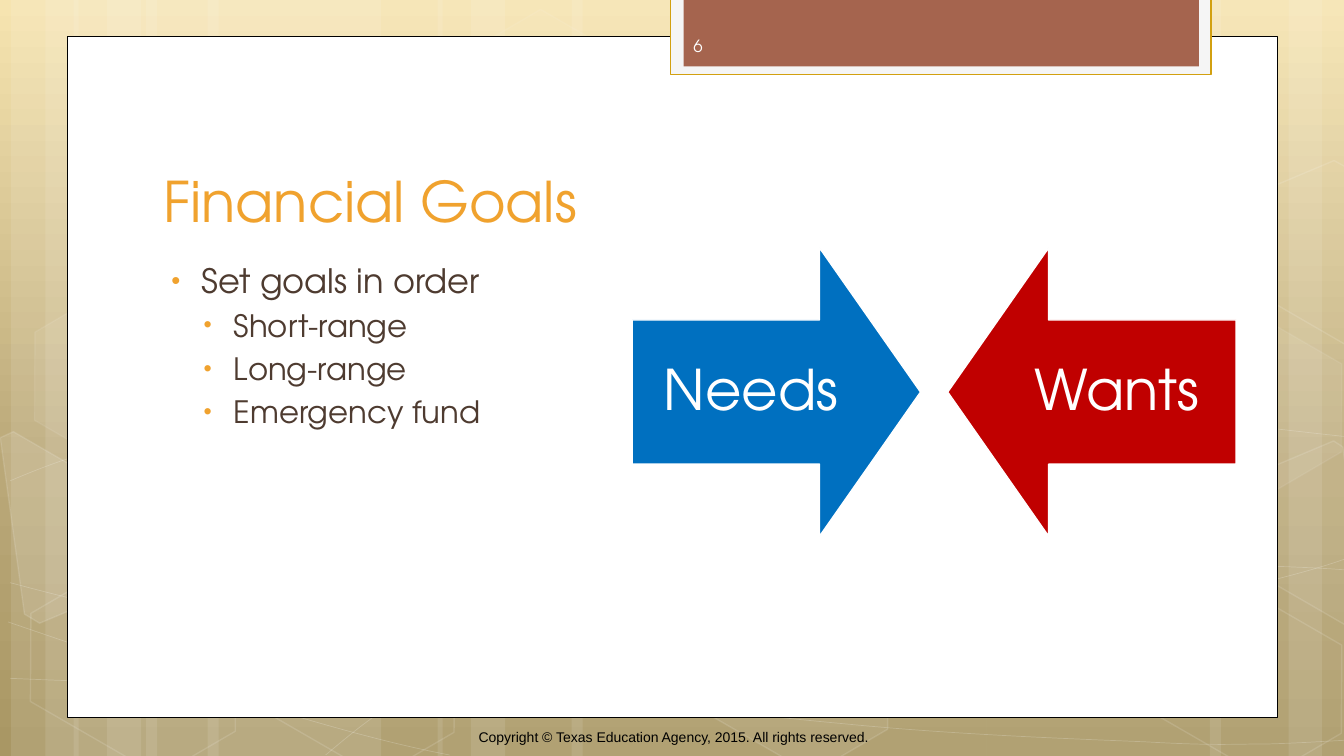
from copy import deepcopy
from math import cos, radians, sin

from pptx import Presentation
from pptx.dml.color import RGBColor
from pptx.enum.shapes import MSO_SHAPE
from pptx.enum.text import MSO_ANCHOR, MSO_AUTO_SIZE, PP_ALIGN
from pptx.oxml.ns import qn
from pptx.util import Inches, Pt
from lxml.etree import SubElement

DISPLAY_FONT = "TeX Gyre Adventor"
WHITE, ORANGE, BROWN = "FFFFFF", "F0A22E", "4E3B30"
TILT = 30

BACKDROP = [(0, "F6E4B0"), (0.62, "BAA878"), (1, "A99764")]

# left, width
STRIPES = [(1.45, 2.33), (0.11, 0.67), (0.45, 1.11), (2.06, 2.33), (0.73, 0.67),
           (1.06, 1.11), (9.78, 2.33), (12.78, 0.67), (12, 1.11), (5.67, 4.11),
           (4.34, 0.67), (4.67, 1.11)]

# start point, then two control points and an end point for each bend
CURVES = [
    [(0.1, 6.73), (0.82, 6.76), (1.54, 6.79), (2.54, 6.78), (3.54, 6.77), (4.77, 6.75),
     (6.1, 6.65), (7.44, 6.55), (9.33, 6.36), (10.55, 6.17), (11.78, 5.98),
     (13.03, 5.68), (13.43, 5.51)],
    [(0.1, 4.77), (0.48, 4.61), (0.86, 4.46), (1.62, 4.31), (2.38, 4.16), (3.45, 3.94),
     (4.63, 3.87), (5.82, 3.8), (7.25, 3.79), (8.72, 3.87), (10.19, 3.95),
     (12.63, 4.26), (13.43, 4.34)],
    [(0.08, 6.17), (1.69, 6.72), (3.3, 7.27), (4.46, 7.49)],
    [(0.1, 5.78), (0.51, 5.89), (0.93, 6), (1.71, 6.16), (2.48, 6.31), (3.64, 6.56),
     (4.75, 6.73), (5.86, 6.9), (7.27, 7.08), (8.37, 7.18), (9.48, 7.29),
     (10.66, 7.33), (11.37, 7.36), (12.07, 7.4), (12.25, 7.38), (12.6, 7.38),
     (12.94, 7.37), (13.19, 7.35), (13.43, 7.34)],
    [(3.23, 7.49), (3.47, 7.29), (3.7, 7.09), (4.03, 6.91), (4.35, 6.73), (4.8, 6.53),
     (5.17, 6.39), (5.54, 6.25), (5.77, 6.19), (6.26, 6.09), (6.75, 5.99),
     (7.65, 5.85), (8.11, 5.78), (8.58, 5.71), (8.65, 5.71), (9.07, 5.69),
     (9.48, 5.66), (10.13, 5.63), (10.59, 5.62), (11.05, 5.61), (11.82, 5.62),
     (11.82, 5.62), (11.82, 5.62), (12.7, 5.62), (12.7, 5.62), (12.95, 5.63),
     (13.17, 5.64), (13.29, 5.65), (13.41, 5.66), (13.37, 5.65), (13.41, 5.66)],
]

# left, top, fill opacity, line opacity
HEXAGONS = [(4.45, 0.36, 4, 8), (6.62, 5.89, 6, 12), (0.15, 5.91, 0, 12),
            (0.19, 3.12, 7, 8), (2.32, 5.92, 0, 12), (11.12, 5.93, 0, 12),
            (11.12, 3.14, 7, 8)]

# centre, corners as they stand after the tilt, fill opacity
CUT_HEXAGONS = [
    ((0.48, 5.35), [(0, 4.34), (0.13, 4.28), (1.15, 4.87), (1.27, 5.81), (0.39, 6.18),
                    (0.24, 6.09)], 10),
    ((13.14, 5.2), [(12.35, 4.74), (13.23, 4.37), (13.32, 4.43), (13.57, 6.25),
                    (13.49, 6.28), (12.47, 5.69)], 4),
    ((13.14, 2.41), [(12.35, 1.96), (13.23, 1.59), (13.34, 1.65), (13.57, 3.46),
                     (13.49, 3.5), (12.47, 2.91)], 0),
]

GOALS = [("Set goals in order", 0), ("Short-range", 1), ("Long-range", 1),
         ("Emergency fund", 1)]


def paint(fill, color, opacity=100):
    if not color or not opacity:
        fill.background()
        return
    fill.solid()
    fill.fore_color.rgb = RGBColor.from_string(color)
    if opacity < 100:
        rgb = fill._xPr.find(qn("a:solidFill"))[0]
        SubElement(rgb, qn("a:alpha"), val=str(opacity * 1000))


def finish(shape, color, opacity=100, line=None, line_width=1, line_opacity=100):
    """Set fill and outline, and drop the theme shadow."""
    shape.shadow.inherit = False
    paint(shape.fill, color, opacity)
    paint(shape.line.fill, line, line_opacity)
    if line:
        shape.line.width = Pt(line_width)
    return shape


def add_preset(slide, kind, left, top, width, height, color, **look):
    box = map(Inches, (left, top, width, height))
    return finish(slide.shapes.add_shape(kind, *box), color, **look)


def add_outline(slide, points, closed):
    corners = [(Inches(x), Inches(y)) for x, y in points]
    builder = slide.shapes.build_freeform(*corners[0])
    builder.add_line_segments(corners[1:], close=closed)
    return builder.convert_to_shape()


def add_curve(slide, points):
    """Draw an open outline and join each three of its segments into one bend."""
    curve = add_outline(slide, points, False)
    outline = curve.element.find(".//" + qn("a:path"))
    segments = outline.findall(qn("a:lnTo"))
    for i in range(0, len(segments), 3):
        bend = SubElement(outline, qn("a:cubicBezTo"))
        for segment in segments[i:i + 3]:
            bend.append(segment[0])
            outline.remove(segment)
    return curve


def untilt(point, center):
    dx, dy = point[0] - center[0], point[1] - center[1]
    c, s = cos(radians(TILT)), sin(radians(TILT))
    return center[0] + dx * c + dy * s, center[1] - dx * s + dy * c


def style(paragraph, size, color, font=DISPLAY_FONT, align=PP_ALIGN.LEFT):
    paragraph.alignment = align
    paragraph.font.name = font
    paragraph.font.size = Pt(size)
    paragraph.font.color.rgb = RGBColor.from_string(color)


def add_label(slide, text, left, top, width, height, size, color, **text_style):
    frame = slide.shapes.add_textbox(*map(Inches, (left, top, width, height))).text_frame
    frame.word_wrap = True
    frame.vertical_anchor = MSO_ANCHOR.MIDDLE
    frame.text = text
    style(frame.paragraphs[0], size, color, **text_style)


def add_arrow(slide, kind, text, left, color):
    arrow = add_preset(slide, kind, left, 2.46, 2.86, 2.86, color, line=WHITE)
    arrow.adjustments[0], arrow.adjustments[1] = 0.5, 0.35
    frame = arrow.text_frame
    frame.word_wrap = False
    frame.vertical_anchor = MSO_ANCHOR.MIDDLE
    frame.margin_left = frame.margin_right = Inches(0.31)
    frame.margin_top = frame.margin_bottom = Inches(0.31)
    frame.text = text
    frame.paragraphs[0].line_spacing = 0.9
    style(frame.paragraphs[0], 40, WHITE, align=PP_ALIGN.CENTER)


def place(placeholder, left, top, width, height, anchor):
    """Move a placeholder and bring it to the front."""
    placeholder.left, placeholder.top = Inches(left), Inches(top)
    placeholder.width, placeholder.height = Inches(width), Inches(height)
    placeholder.element.getparent().append(placeholder.element)
    frame = placeholder.text_frame
    frame.word_wrap = True
    frame.auto_size = MSO_AUTO_SIZE.NONE
    frame.vertical_anchor = anchor
    return frame


def set_bullet(paragraph, margin):
    properties = paragraph._p.get_or_add_pPr()
    properties.set("marL", str(Inches(margin)))
    properties.set("indent", str(Inches(-0.3)))
    SubElement(SubElement(properties, qn("a:buClr")), qn("a:srgbClr"), val=ORANGE)
    SubElement(properties, qn("a:buSzPct"), val="76000")
    SubElement(properties, qn("a:buFont"), typeface="Arial")
    SubElement(properties, qn("a:buChar"), char="•")


def add_backdrop(slide):
    fill = slide.background.fill
    fill.gradient()
    fill.gradient_angle = 270
    stop_list = slide.element.find(".//" + qn("a:gsLst"))
    stop_list.append(deepcopy(stop_list[0]))
    for stop, (position, color) in zip(fill.gradient_stops, BACKDROP):
        stop.position = position
        stop.color.rgb = RGBColor.from_string(color)

    for left, width in STRIPES:
        add_preset(slide, MSO_SHAPE.RECTANGLE, left, 0, width, 7.5, WHITE, opacity=10)
    for points in CURVES:
        finish(add_curve(slide, points), None, line=WHITE, line_width=0.5, line_opacity=20)
    for left, top, opacity, line_opacity in HEXAGONS:
        hexagon = add_preset(slide, MSO_SHAPE.HEXAGON, left, top, 2.34, 1.52, WHITE,
                             opacity=opacity, line=WHITE, line_opacity=line_opacity)
        hexagon.adjustments[0] = 0.285
        hexagon.rotation = TILT
    for center, corners, opacity in CUT_HEXAGONS:
        cut = add_outline(slide, [untilt(corner, center) for corner in corners], True)
        finish(cut, WHITE, opacity, line=WHITE, line_opacity=12).rotation = TILT


def main():
    deck = Presentation()
    deck.slide_width, deck.slide_height = Inches(13.33), Inches(7.5)
    slide = deck.slides.add_slide(deck.slide_layouts[1])

    add_backdrop(slide)
    add_preset(slide, MSO_SHAPE.RECTANGLE, 0.67, 0.36, 12, 6.76, WHITE,
               line="000000", line_width=0.5)
    add_preset(slide, MSO_SHAPE.RECTANGLE, 6.65, -0.02, 5.36, 0.76, "F5F5F5", line="D2A010")
    add_preset(slide, MSO_SHAPE.RECTANGLE, 6.78, -0.02, 5.11, 0.68, "A5644E")
    add_label(slide, "6", 6.78, 0.25, 1.94, 0.4, 12, "FEFEFE")

    add_arrow(slide, MSO_SHAPE.RIGHT_ARROW, "Needs", 6.27, "0070C0")
    add_arrow(slide, MSO_SHAPE.LEFT_ARROW, "Wants", 9.4, "C00000")

    goals = place(slide.placeholders[1], 1.52, 2.53, 4.99, 3.82, MSO_ANCHOR.TOP)
    goals.text = "\n".join(text for text, _ in GOALS)
    for paragraph, (_, level) in zip(goals.paragraphs, GOALS):
        paragraph.level = level
        set_bullet(paragraph, 0.7 if level else 0.38)
        style(paragraph, 22 if level else 24, BROWN)

    title = place(slide.shapes.title, 1.52, 1.12, 10.24, 1.25, MSO_ANCHOR.BOTTOM)
    title.text = "Financial Goals"
    style(title.paragraphs[0], 40, ORANGE)

    add_label(slide, "Copyright © Texas Education Agency, 2015. All rights reserved.",
              4.18, 7.18, 5, 0.27, 10, "000000", font="Arial", align=PP_ALIGN.CENTER)
    deck.save("out.pptx")


if __name__ == "__main__":
    main()
